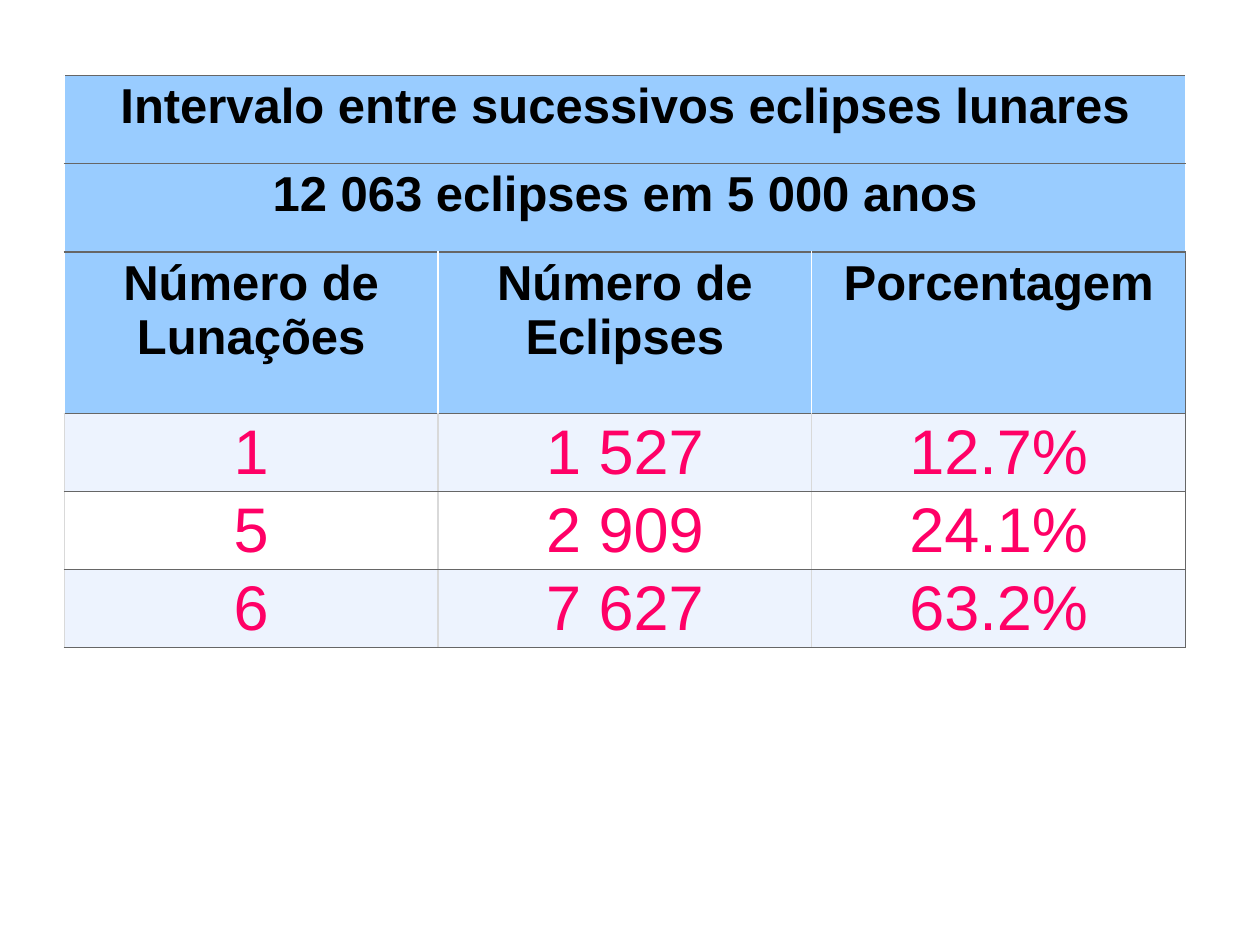
from lxml.etree import SubElement
from pptx import Presentation
from pptx.dml.color import RGBColor
from pptx.enum.text import PP_ALIGN
from pptx.oxml.ns import qn
from pptx.util import Inches, Pt

SKY = RGBColor(0x99, 0xCC, 0xFF)
PALE = RGBColor(0xED, 0xF3, 0xFE)
WHITE = RGBColor(0xFF, 0xFF, 0xFF)
BLACK = RGBColor(0, 0, 0)
PINK = RGBColor(0xFF, 0x00, 0x66)
GREY = RGBColor(0x66, 0x66, 0x66)
LIGHT_GREY = RGBColor(0xD9, 0xD9, 0xD9)

HEADINGS = [
    ["Intervalo entre sucessivos eclipses lunares"],
    ["12 063 eclipses em 5 000 anos"],
    ["Número de Lunações", "Número de Eclipses", "Porcentagem"],
]
INTERVALS = [
    ["1", "1 527", "12.7%"],
    ["5", "2 909", "24.1%"],
    ["6", "7 627", "63.2%"],
]
ROW_HEIGHTS = [0.7, 0.7, 1.28] + [0.62] * len(INTERVALS)
COLUMNS = 3


class SlideBuilder:
    """Holds the style and the current slide."""

    font_name = "Arial"
    heading_size = Pt(28)
    value_size = Pt(36)
    border_width = Pt(0.75)

    def __init__(self, presentation):
        self.width = presentation.slide_width
        self.height = presentation.slide_height
        self.slide = presentation.slides.add_slide(presentation.slide_layouts[6])

    def add_table(self, left, top, width, headings, values, row_heights):
        """Place a table; left, top and width are shares of the slide."""
        rows = headings + values
        frame = self.slide.shapes.add_table(
            len(rows), COLUMNS, int(left * self.width), int(top * self.height),
            int(width * self.width), Inches(sum(row_heights)))
        table = frame.table
        table.horz_banding = False
        for row, height in zip(table.rows, row_heights):
            row.height = Inches(height)

        for row_index, texts in enumerate(rows):
            if len(texts) == 1:
                table.cell(row_index, 0).merge(table.cell(row_index, COLUMNS - 1))
            is_heading = row_index < len(headings)
            striped = (row_index - len(headings)) % 2 == 0
            fill = SKY if is_heading else PALE if striped else WHITE
            for column in range(COLUMNS):
                cell = table.cell(row_index, column)
                inner = WHITE if is_heading else LIGHT_GREY
                outer = GREY if column == COLUMNS - 1 else inner
                self.set_borders(cell, inner, outer)
                cell.fill.solid()
                cell.fill.fore_color.rgb = fill
                if column < len(texts):
                    self.write_cell(cell, texts[column], is_heading)

    def set_borders(self, cell, left, right):
        properties = cell._tc.get_or_add_tcPr()
        for side, color in zip("LRTB", (left, right, GREY, GREY)):
            line = SubElement(properties, qn(f"a:ln{side}"), w=str(self.border_width))
            solid = SubElement(line, qn("a:solidFill"))
            SubElement(solid, qn("a:srgbClr"), val=str(color))

    def write_cell(self, cell, text, is_heading):
        cell.margin_left = cell.margin_right = Inches(0.08)
        cell.margin_top = cell.margin_bottom = Inches(0.03)
        cell.text = text
        paragraph = cell.text_frame.paragraphs[0]
        paragraph.alignment = PP_ALIGN.CENTER
        font = paragraph.font
        font.name = self.font_name
        font.size = self.heading_size if is_heading else self.value_size
        font.bold = is_heading
        font.color.rgb = BLACK if is_heading else PINK


def main():
    presentation = Presentation()
    presentation.slide_width = Inches(10)
    presentation.slide_height = Inches(7.5)

    # Eclipse interval table
    builder = SlideBuilder(presentation)
    builder.add_table(0.051, 0.08, 0.89, HEADINGS, INTERVALS, ROW_HEIGHTS)

    presentation.save("out.pptx")


if __name__ == "__main__":
    main()
